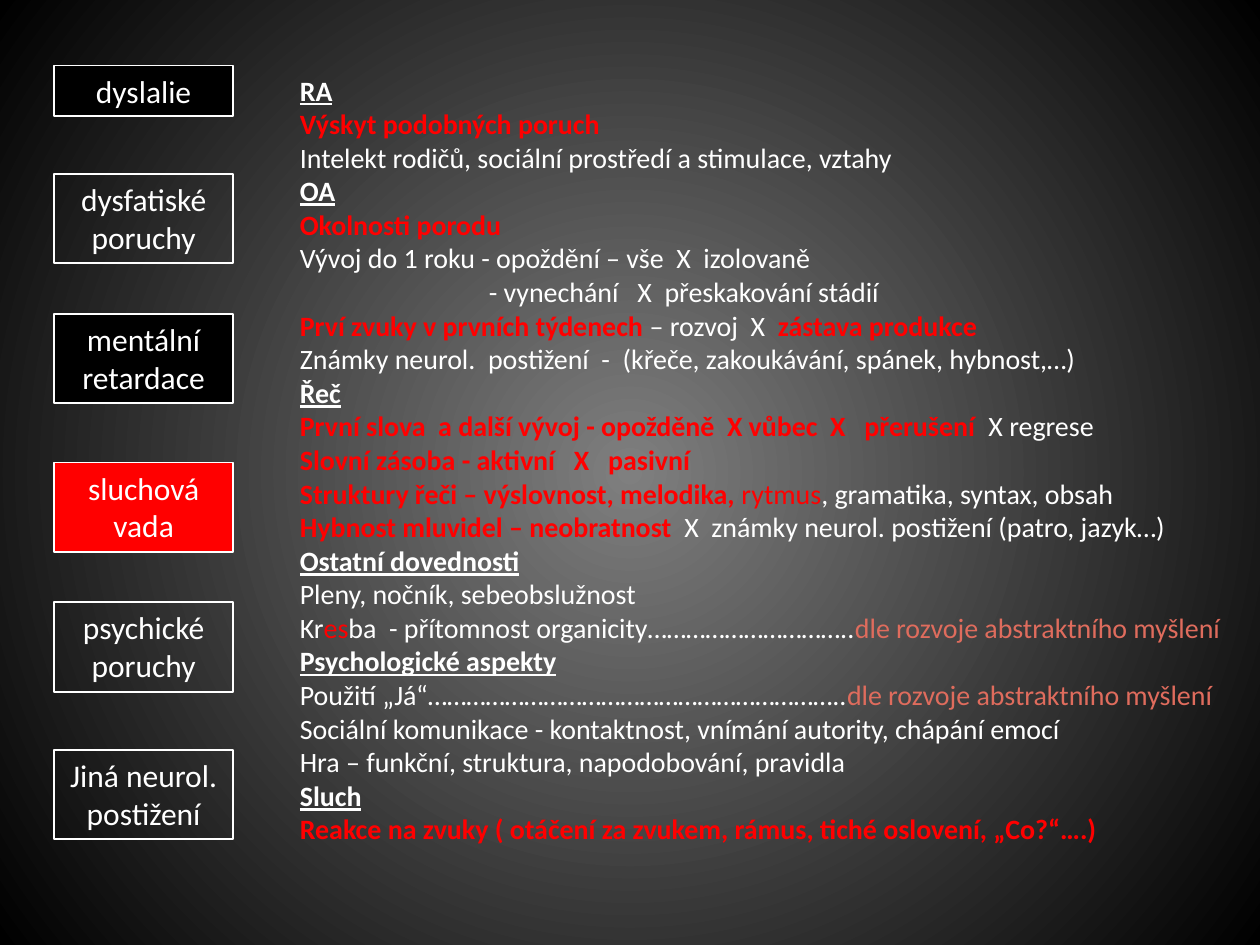
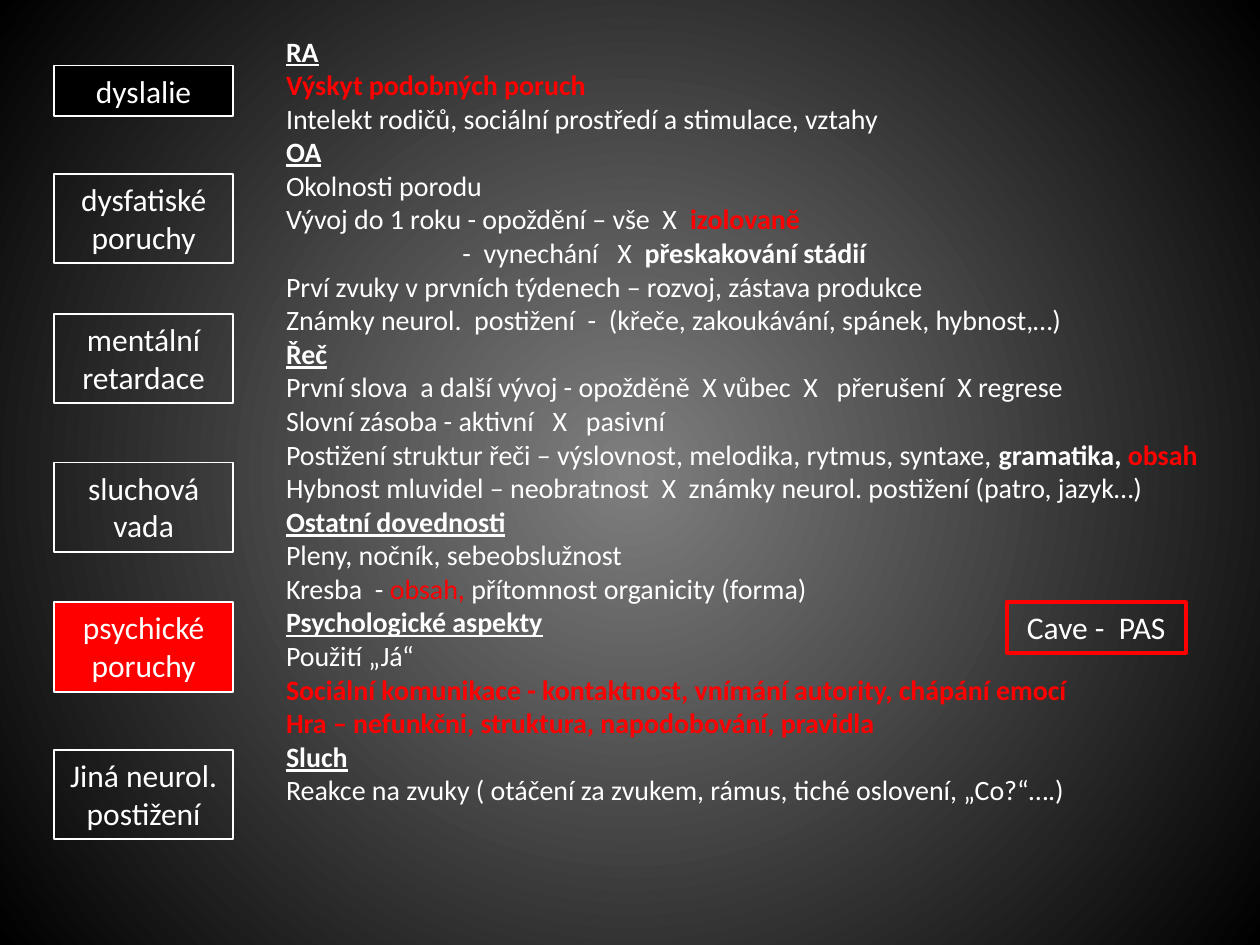
from dataclasses import dataclass

from lxml import etree
from pptx import Presentation
from pptx import util as u
from pptx.dml.color import RGBColor
from pptx.enum import shapes, text
from pptx.oxml.ns import qn


@dataclass(frozen=True)
class Theme:
    """Colours, font and type sizes of the deck."""
    font: str = "Calibri"
    label_size: int = 18
    list_size: int = 16
    white: str = "FFFFFF"
    black: str = "000000"
    red: str = "FF0000"
    coral: str = "DF6C5D"
    glow: str = "7F7F7F"


THEME = Theme()
STYLES = {
    "plain": {},
    "strong": {"bold": True},
    "heading": {"bold": True, "underline": True},
    "alert": {"bold": True, "color": THEME.red},
    "red": {"color": THEME.red},
    "coral": {"color": THEME.coral},
}

DISORDERS = [
    ("dyslalie", 0.52, 0.4),
    ("dysfatiské poruchy", 1.38, 0.71),
    ("mentální retardace", 2.49, 0.71),
    ("sluchová vada", 3.67, 0.71),
    ("psychické poruchy", 4.78, 0.71),
    ("Jiná neurol. postižení", 5.95, 0.71),
]
LABEL_LEFT, LABEL_WIDTH = 0.43, 1.42

HEADINGS = ["RA", "OA", "Řeč", "Ostatní dovednosti", "Psychologické aspekty", "Sluch"]
FAMILY = [
    [("Výskyt podobných poruch", "alert")],
    "Intelekt rodičů, sociální prostředí a stimulace, vztahy",
]
BIRTH = "Okolnosti porodu"
FIRST_YEAR = "Vývoj do 1 roku - opoždění – vše  X  "
FIRST_SOUNDS = "Prví zvuky v prvních týdenech"
NEURO_SIGNS = "Známky neurol.  postižení  -  (křeče, zakoukávání, spánek, hybnost,…)"
FIRST_WORDS = "První slova  a další vývoj - opožděně  X vůbec  X   přerušení"
REGRESSION = "  X regrese"
VOCABULARY = "Slovní zásoba - aktivní   X   pasivní"
ORAL_MOTION = "Hybnost mluvidel – neobratnost"
ORAL_NEURO = "  X  známky neurol. postižení (patro, jazyk…)"
SELF_CARE = "Pleny, nočník, sebeobslužnost"
ABSTRACTION = ("dle rozvoje abstraktního myšlení", "coral")
SELF_WORD = "Použití „Já“"
SOCIAL = "Sociální komunikace - kontaktnost, vnímání autority, chápání emocí"
SOUND_REACTION = "Reakce na zvuky ( otáčení za zvukem, rámus, tiché oslovení, „Co?“….)"

HEARING_LOSS = [
    FAMILY,
    [
        [(BIRTH, "alert")],
        FIRST_YEAR + "izolovaně",
        [("- vynechání   X  přeskakování stádií", "plain", 1.5)],
        [(FIRST_SOUNDS, "alert"), (" – rozvoj  X  ", "plain"), ("zástava produkce", "alert")],
        NEURO_SIGNS,
    ],
    [
        [(FIRST_WORDS, "alert"), (REGRESSION, "plain")],
        [(VOCABULARY, "alert")],
        [("Struktury řeči – výslovnost, melodika, ", "alert"), ("rytmus", "red"),
         (", gramatika, syntax, obsah", "plain")],
        [(ORAL_MOTION, "alert"), (ORAL_NEURO, "plain")],
    ],
    [
        SELF_CARE,
        [("Kr", "plain"), ("es", "red"),
         ("ba  - přítomnost organicity…………………………..", "plain"), ABSTRACTION],
    ],
    [
        [(SELF_WORD + "………………………………………………………..", "plain"), ABSTRACTION],
        SOCIAL,
        "Hra – funkční, struktura, napodobování, pravidla",
    ],
    [[(SOUND_REACTION, "alert")]],
]

MENTAL_DISORDERS = [
    FAMILY,
    [
        BIRTH,
        [(FIRST_YEAR, "plain"), ("izolovaně", "alert")],
        [("-  vynechání   X  ", "plain", 1.4), ("přeskakování stádií", "strong")],
        FIRST_SOUNDS + " – rozvoj, zástava produkce",
        NEURO_SIGNS,
    ],
    [
        FIRST_WORDS + REGRESSION,
        VOCABULARY,
        [("Postižení struktur řeči – výslovnost, melodika, rytmus, syntaxe, ", "plain"),
         ("gramatika,", "strong"), (" obsah", "alert")],
        ORAL_MOTION + ORAL_NEURO,
    ],
    [
        SELF_CARE,
        [("Kresba  - ", "plain"), ("obsah, ", "red"), ("přítomnost organicity (forma)", "plain")],
    ],
    [
        SELF_WORD,
        [(SOCIAL, "alert")],
        [("Hra – nefunkčni, struktura, napodobování, pravidla", "alert")],
    ],
    [SOUND_REACTION],
]


def rgb(code):
    """Turn a hex code into a colour."""
    return RGBColor.from_string(code)


def write(paragraph, words, size=THEME.list_size, color=THEME.white, bold=False, underline=False):
    """Add formatted words to a paragraph."""
    run = paragraph.add_run()
    run.text = words
    font = run.font
    font.name, font.size = THEME.font, u.Pt(size)
    font.bold, font.underline = bold, underline
    font.color.rgb = rgb(color)


def paint_background(master):
    """Give the master a radial gradient that darkens towards the edges."""
    fill = master.background.fill
    fill.gradient()
    for stop, color, position in zip(fill.gradient_stops, (THEME.glow, THEME.black), (0, 1)):
        stop.color.rgb = rgb(color)
        stop.position = position
    gradient = master.element.find(".//" + qn("p:bg")).find(".//" + qn("a:gradFill"))
    gradient.remove(gradient.find(qn("a:lin")))
    circle = etree.SubElement(gradient, qn("a:path"), {"path": "circle"})
    etree.SubElement(circle, qn("a:fillToRect"), dict.fromkeys("ltrb", "50000"))


def add_label(slide, words, box, fill=None, line=THEME.white, weight=1):
    """Draw a framed label in the given box."""
    label = slide.shapes.add_shape(shapes.MSO_SHAPE.RECTANGLE, *map(u.Inches, box))
    label.shadow.inherit = False
    if fill:
        label.fill.solid()
        label.fill.fore_color.rgb = rgb(fill)
    else:
        label.fill.background()
    label.line.color.rgb = rgb(line)
    label.line.width = u.Pt(weight)
    frame = label.text_frame
    frame.word_wrap = True
    frame.auto_size = text.MSO_AUTO_SIZE.SHAPE_TO_FIT_TEXT
    frame.vertical_anchor = text.MSO_ANCHOR.TOP
    paragraph = frame.paragraphs[0]
    paragraph.alignment = text.PP_ALIGN.CENTER
    write(paragraph, words, size=THEME.label_size)


def add_disorders(slide, fills):
    """Stack the disorder labels, filling those named in fills."""
    for name, top, height in DISORDERS:
        add_label(slide, name, (LABEL_LEFT, top, LABEL_WIDTH, height), fills.get(name))


def add_line(paragraph, parts):
    """Write one unbulleted line; a third item in its first part is the indent."""
    if isinstance(parts, str):
        parts = [(parts, "plain")]
    indent = parts[0][2] if len(parts[0]) > 2 else 0
    paragraph.space_before = u.Pt(0)
    properties = paragraph._p.get_or_add_pPr()
    properties.set("marL", str(u.Inches(indent)))
    properties.set("indent", "0")
    etree.SubElement(properties, qn("a:buNone"))
    for words, style, *_ in parts:
        write(paragraph, words, **STYLES[style])


def add_anamnesis(slide, sections, box):
    """Fill the body placeholder with headed sections."""
    body = slide.placeholders[1]
    body.left, body.top, body.width, body.height = map(u.Inches, box)
    frame = body.text_frame
    frame.word_wrap = True
    frame.auto_size = text.MSO_AUTO_SIZE.SHAPE_TO_FIT_TEXT
    frame.vertical_anchor = text.MSO_ANCHOR.TOP
    lines = [line for heading, content in zip(HEADINGS, sections)
             for line in ([(heading, "heading")], *content)]
    for number, line in enumerate(lines):
        add_line(frame.add_paragraph() if number else frame.paragraphs[0], line)


def add_diagnosis(deck, fills, sections, box):
    """Add a slide with disorder labels beside the anamnesis."""
    slide = deck.slides.add_slide(deck.slide_layouts[1])
    title = slide.shapes.title.element
    title.getparent().remove(title)
    add_disorders(slide, fills)
    add_anamnesis(slide, sections, box)
    return slide


def main():
    """Build and save the deck."""
    deck = Presentation()
    deck.slide_width, deck.slide_height = u.Inches(10), u.Inches(7.5)
    paint_background(deck.slide_master)
    add_diagnosis(
        deck,
        {"dyslalie": THEME.black, "mentální retardace": THEME.black, "sluchová vada": THEME.red},
        HEARING_LOSS, (2.28, 0.53, 7.72, 6.29))
    mental = add_diagnosis(
        deck, {"dyslalie": THEME.black, "psychické poruchy": THEME.red},
        MENTAL_DISORDERS, (2.17, 0.22, 7.83, 6.29))
    add_label(mental, "Cave -  PAS", (7.99, 4.78, LABEL_WIDTH, 0.4), line=THEME.red, weight=2.25)
    deck.save("out.pptx")


if __name__ == "__main__":
    main()
